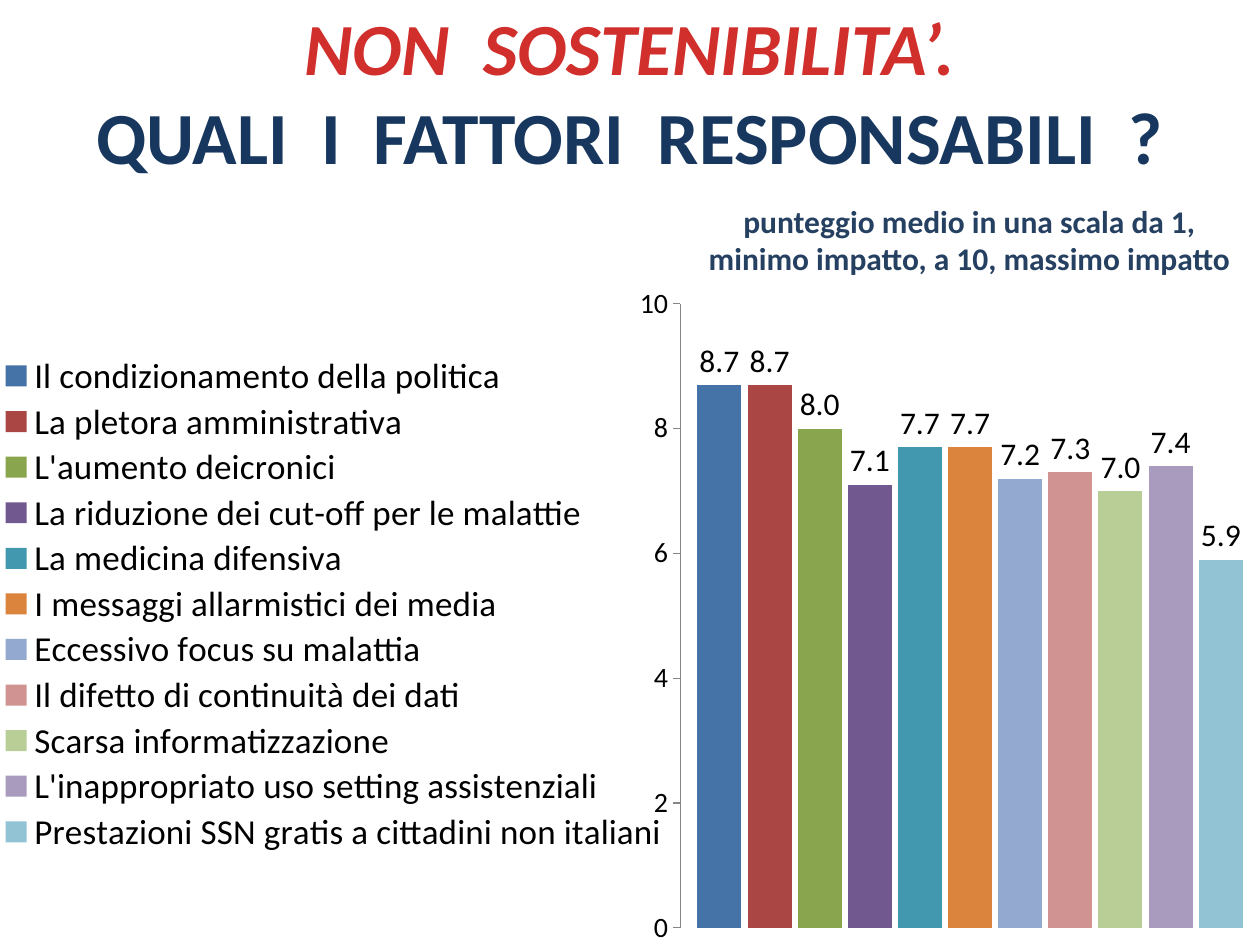
from lxml.etree import SubElement
from pptx import Presentation
from pptx.chart.data import CategoryChartData
from pptx.dml.color import RGBColor
from pptx.enum.chart import XL_CHART_TYPE, XL_LABEL_POSITION, XL_LEGEND_POSITION, XL_TICK_MARK
from pptx.enum.text import MSO_ANCHOR, PP_ALIGN
from pptx.oxml.ns import qn
from pptx.util import Cm, Pt

FONT = "Calibri"
RED = RGBColor(0xD0, 0x2F, 0x2C)
NAVY = RGBColor(0x17, 0x37, 0x5E)
SLATE = RGBColor(0x25, 0x40, 0x61)
BLACK = RGBColor(0x00, 0x00, 0x00)
GREY = RGBColor(0x86, 0x86, 0x86)

FACTORS = [
    ("Il condizionamento della politica", 8.7, RGBColor(0x45, 0x72, 0xA7)),
    ("La pletora amministrativa", 8.7, RGBColor(0xAA, 0x46, 0x43)),
    ("L'aumento deicronici", 8.0, RGBColor(0x89, 0xA5, 0x4E)),
    ("La riduzione dei cut-off per le malattie", 7.1, RGBColor(0x71, 0x58, 0x8F)),
    ("La medicina difensiva", 7.7, RGBColor(0x41, 0x98, 0xAF)),
    ("I messaggi allarmistici dei media", 7.7, RGBColor(0xDB, 0x84, 0x3D)),
    ("Eccessivo focus su malattia", 7.2, RGBColor(0x93, 0xA9, 0xCF)),
    ("Il difetto di continuità dei dati", 7.3, RGBColor(0xD1, 0x93, 0x92)),
    ("Scarsa informatizzazione", 7.0, RGBColor(0xB9, 0xCD, 0x96)),
    ("L'inappropriato uso setting assistenziali", 7.4, RGBColor(0xA9, 0x9B, 0xBD)),
    ("Prestazioni SSN gratis a cittadini non italiani", 5.9, RGBColor(0x91, 0xC3, 0xD5)),
]


def style_text(text_item, size, color, bold=False, italic=False):
    font = text_item.font
    font.name, font.size = FONT, Pt(size)
    font.bold, font.italic = bold, italic
    font.color.rgb = color


def set_layout(element, index, x, y, width, height, inner=False):
    """Fix a chart part at fractions of the chart's box."""
    for old in element.findall(qn("c:layout")):
        element.remove(old)
    layout = element.makeelement(qn("c:layout"), {})
    element.insert(index, layout)
    manual = SubElement(layout, qn("c:manualLayout"))
    settings = [("layoutTarget", "inner")] if inner else []
    settings += [("xMode", "edge"), ("yMode", "edge"),
                 ("x", x), ("y", y), ("w", width), ("h", height)]
    for name, value in settings:
        SubElement(manual, qn(f"c:{name}")).set("val", str(value))


def place_title(slide, left, top, width, height):
    title = slide.shapes.title
    title.left, title.top, title.width, title.height = left, top, width, height
    frame = title.text_frame
    frame.word_wrap = True
    frame.vertical_anchor = MSO_ANCHOR.TOP
    frame.text = "NON  SOSTENIBILITA’.\nQUALI  I  FATTORI  RESPONSABILI  ?"
    first, second = frame.paragraphs
    style_text(first, 42, RED, bold=True, italic=True)
    style_text(second, 42, NAVY, bold=True)
    for paragraph in frame.paragraphs:
        paragraph.alignment = PP_ALIGN.CENTER
        paragraph.space_before = Pt(0)


def add_scale_note(slide, left, top, width, height):
    frame = slide.shapes.add_textbox(left, top, width, height).text_frame
    frame.word_wrap = True
    paragraph = frame.paragraphs[0]
    paragraph.text = "punteggio medio in una scala da 1, minimo impatto, a 10, massimo impatto"
    paragraph.alignment = PP_ALIGN.CENTER
    style_text(paragraph, 18, SLATE, bold=True)


def add_factor_chart(slide, left, top, width, height):
    data = CategoryChartData()
    data.categories = ["1"]
    for name, score, _ in FACTORS:
        data.add_series(name, [score])
    chart = slide.shapes.add_chart(
        XL_CHART_TYPE.COLUMN_CLUSTERED, left, top, width, height, data).chart
    chart.has_title = False
    style_text(chart, 10, BLACK)

    plot = chart.plots[0]
    plot.vary_by_categories = False
    plot.gap_width, plot.overlap = 78, -14
    for series, (_, _, color) in zip(plot.series, FACTORS):
        series.format.fill.solid()
        series.format.fill.fore_color.rgb = color
    plot.has_data_labels = True
    labels = plot.data_labels
    labels.show_value = True
    labels.position = XL_LABEL_POSITION.OUTSIDE_END
    labels.number_format, labels.number_format_is_linked = "#,##0.0", False
    style_text(labels, 18, BLACK)

    chart.category_axis.visible = False
    axis = chart.value_axis
    axis.minimum_scale, axis.maximum_scale, axis.major_unit = 0, 10, 2
    axis.has_major_gridlines = False
    axis.major_tick_mark = XL_TICK_MARK.OUTSIDE
    axis.format.line.color.rgb = GREY
    axis.tick_labels.number_format = "#,##0"
    axis.tick_labels.number_format_is_linked = False
    style_text(axis.tick_labels, 16, BLACK)

    chart.has_legend = True
    legend = chart.legend
    legend.position = XL_LEGEND_POSITION.RIGHT
    legend.include_in_layout = False
    style_text(legend, 20, BLACK)
    set_layout(legend._element, 1, 0, 0.2, 0.53, 0.68)
    plot_area = chart._chartSpace.chart.plotArea
    set_layout(plot_area, 0, 0.54, 0.135, 0.46, 0.842, inner=True)


def main():
    presentation = Presentation()
    presentation.slide_width, presentation.slide_height = Cm(25.4), Cm(19.05)
    slide = presentation.slides.add_slide(presentation.slide_layouts[5])
    add_factor_chart(slide, Cm(0), Cm(4.11), Cm(25.4), Cm(14.94))
    add_scale_note(slide, Cm(13.69), Cm(3.94), Cm(11.71), Cm(1.8))
    place_title(slide, Cm(0), Cm(-0.08), Cm(25.4), Cm(3.84))
    presentation.save("out.pptx")


if __name__ == "__main__":
    main()
